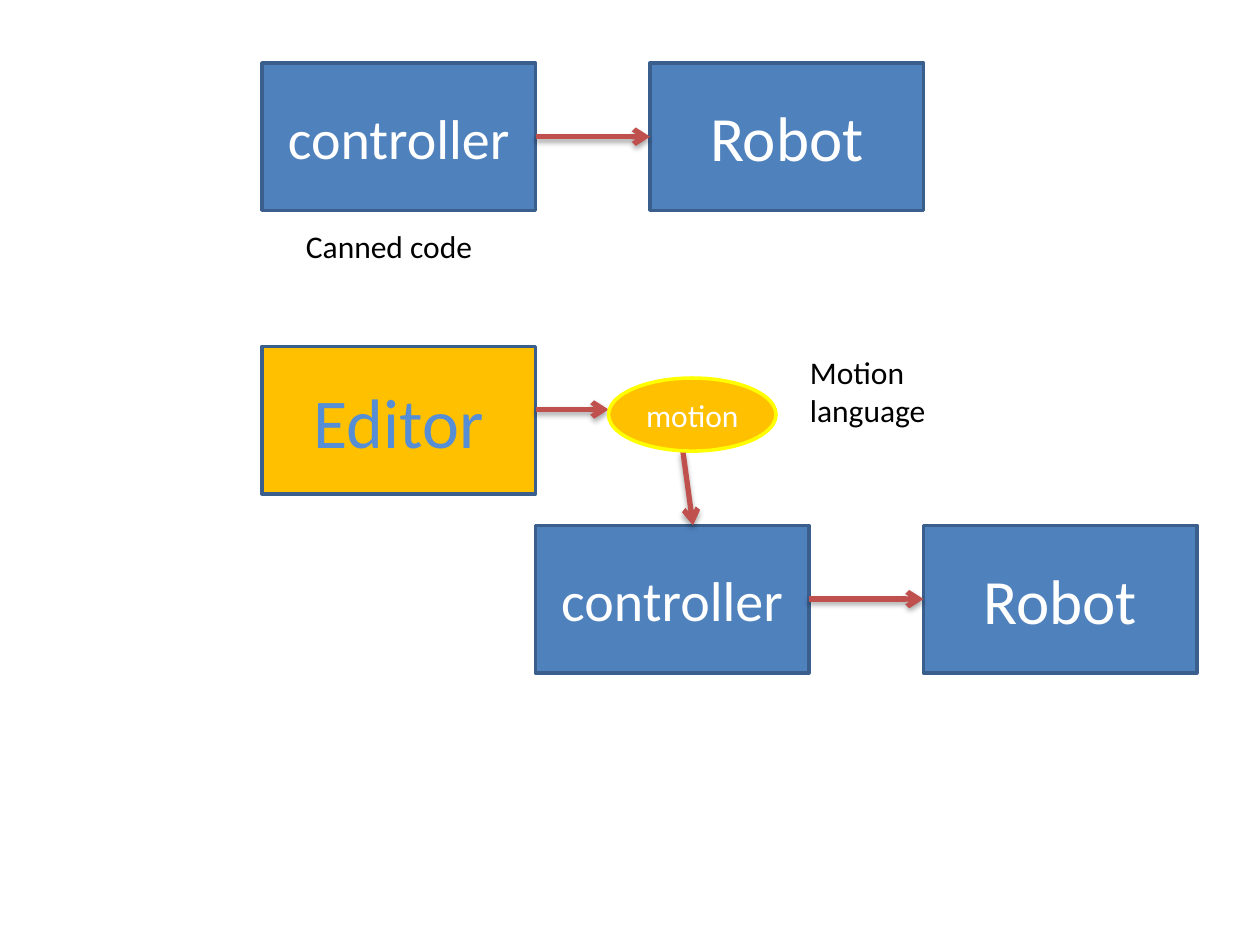
import pptx
import pptx.util
import pptx.dml.color
import pptx.enum.shapes
import pptx.enum.text
import pptx.oxml
import pptx.oxml.ns

Inches, Pt = pptx.util.Inches, pptx.util.Pt
RGB = pptx.dml.color.RGBColor
SHAPE = pptx.enum.shapes.MSO_SHAPE
STRAIGHT = pptx.enum.shapes.MSO_CONNECTOR.STRAIGHT
ALIGN = pptx.enum.text.PP_ALIGN
ANCHOR = pptx.enum.text.MSO_ANCHOR
FIT = pptx.enum.text.MSO_AUTO_SIZE

BLUE = RGB(0x4F, 0x81, 0xBD)
EDGE = RGB(0x3A, 0x5F, 0x8C)
LIGHT_BLUE = RGB(0x55, 0x8E, 0xD5)
ORANGE = RGB(0xFF, 0xC0, 0x00)
YELLOW = RGB(0xFF, 0xFF, 0x00)
RED = RGB(0xC0, 0x50, 0x4D)
WHITE = RGB(0xFF, 0xFF, 0xFF)
BLACK = RGB(0x00, 0x00, 0x00)

FONT = "Calibri"
BOX_W, BOX_H = 2.17, 1.17
ROBOT_OFFSET = 3.08

PAIRS = [(2.08, 0.5), (4.25, 4.17)]
LABELS = [
    ("Canned code", 2.33, 1.75, 1.83, 0.4),
    ("Motion language", 6.33, 2.75, 1.83, 0.71),
]
LOOSE_ARROWS = [(4.25, 3.25, 4.83, 3.25), (5.42, 3.58, 5.5, 4.17)]

TAIL = '<a:tailEnd %s type="arrow"/>'
SHADOW = (
    '<a:effectLst %s><a:outerShdw blurRad="40000" dist="23000" dir="5400000" rotWithShape="0">'
    '<a:srgbClr val="000000"><a:alpha val="35000"/></a:srgbClr></a:outerShdw></a:effectLst>'
)


def write(sp, text, size, color, **frame):
    tf = sp.text_frame
    for name, value in {"word_wrap": True, **frame}.items():
        setattr(tf, name, value)
    p = tf.paragraphs[0]
    r = p.add_run()
    r.text = text
    for name, value in {"name": FONT, "size": Pt(size)}.items():
        setattr(r.font, name, value)
    r.font.color.rgb = color
    return p


def add_box(s, text, x, y, size, w=BOX_W, h=BOX_H, kind=SHAPE.RECTANGLE,
            fill=BLUE, edge=EDGE, color=WHITE):
    sp = s.shapes.add_shape(kind, Inches(x), Inches(y), Inches(w), Inches(h))
    sp.shadow.inherit = False
    sp.fill.solid()
    sp.fill.fore_color.rgb = fill
    sp.line.color.rgb = edge
    sp.line.width = Pt(2)
    p = write(sp, text, size, color, vertical_anchor=ANCHOR.MIDDLE)
    p.alignment = ALIGN.CENTER
    return sp


def add_arrow(s, x1, y1, x2, y2):
    c = s.shapes.add_connector(STRAIGHT, Inches(x1), Inches(y1), Inches(x2), Inches(y2))
    c.line.color.rgb = RED
    c.line.width = Pt(3)
    ns = pptx.oxml.ns.nsdecls("a")
    sppr = c._element.spPr
    sppr.find(pptx.oxml.ns.qn("a:ln")).append(pptx.oxml.parse_xml(TAIL % ns))
    sppr.append(pptx.oxml.parse_xml(SHADOW % ns))
    return c


def main():
    prs = pptx.Presentation()
    prs.slide_width, prs.slide_height = Inches(10), Inches(7.5)
    s = prs.slides.add_slide(prs.slide_layouts[6])

    for x, y in PAIRS:
        robot = add_box(s, "Robot", x + ROBOT_OFFSET, y, 36)
        controller = add_box(s, "controller", x, y, 32)
        mid = y + BOX_H / 2
        c = add_arrow(s, x + BOX_W, mid, x + ROBOT_OFFSET, mid)
        c.begin_connect(controller, 3)
        c.end_connect(robot, 1)

    for text, x, y, w, h in LABELS:
        sp = s.shapes.add_textbox(Inches(x), Inches(y), Inches(w), Inches(h))
        write(sp, text, 18, BLACK, auto_size=FIT.SHAPE_TO_FIT_TEXT)

    add_box(s, "Editor", 2.08, 2.75, 40, fill=ORANGE, color=LIGHT_BLUE)
    for ends in LOOSE_ARROWS:
        add_arrow(s, *ends)
    add_box(s, "motion", 4.83, 3, 18, w=1.33, h=0.58, kind=SHAPE.OVAL,
            fill=ORANGE, edge=YELLOW)

    prs.save("out.pptx")


if __name__ == "__main__":
    main()
